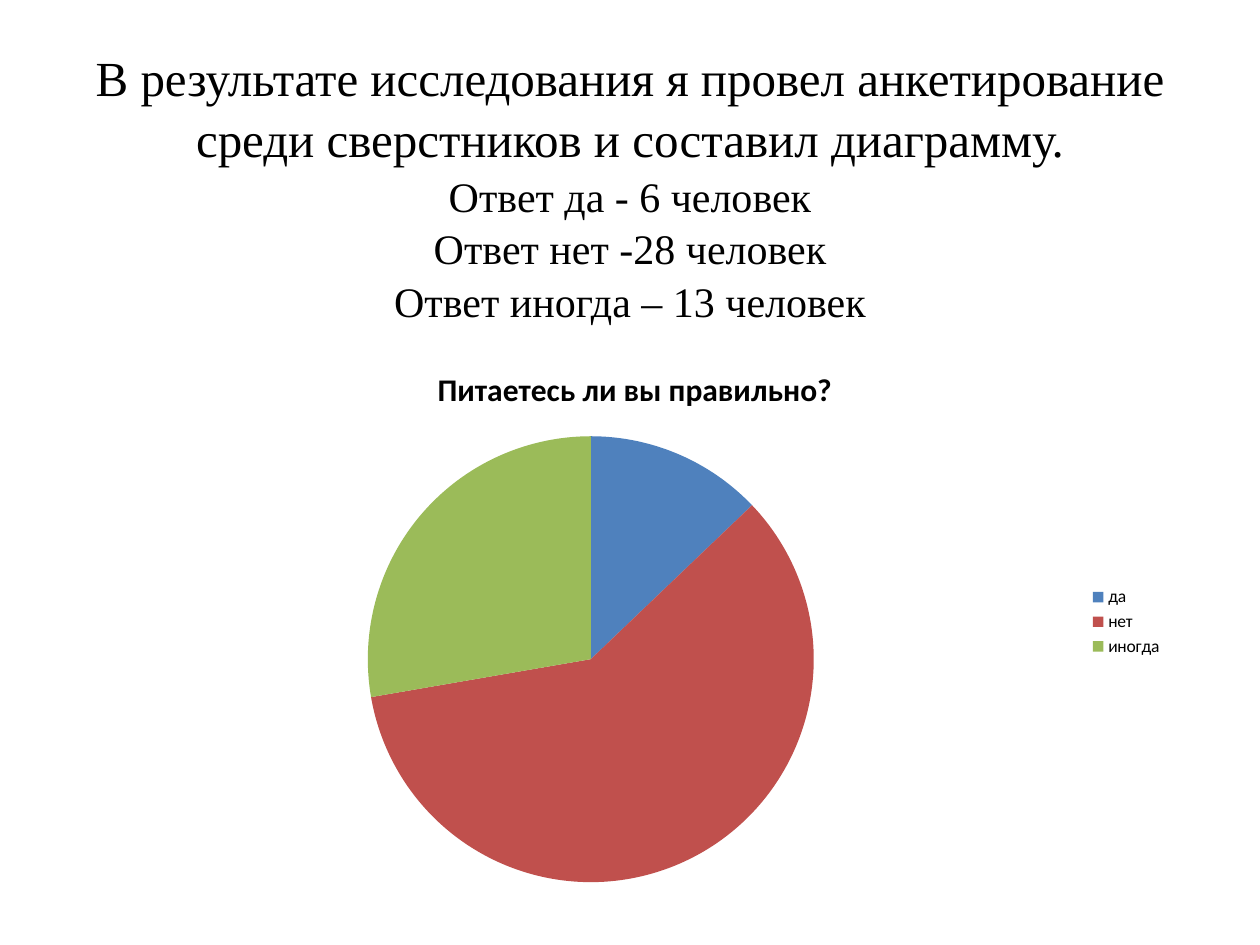
from pptx import Presentation
from pptx.chart.data import CategoryChartData
from pptx.dml.color import RGBColor
from pptx.enum.chart import XL_CHART_TYPE as ChartType, XL_LEGEND_POSITION as LegendPosition
from pptx.enum.text import MSO_ANCHOR as Anchor, PP_ALIGN as Align
from pptx.util import Inches, Pt
from lxml import etree

BLACK = RGBColor(0x00, 0x00, 0x00)
BLUE = RGBColor(0x4F, 0x81, 0xBD)
RED = RGBColor(0xC0, 0x50, 0x4D)
GREEN = RGBColor(0x9B, 0xBB, 0x59)

HEADING = "В результате исследования я провел анкетирование среди сверстников и составил диаграмму."
RESULTS = ["Ответ да - 6 человек", "Ответ нет -28 человек", "Ответ иногда – 13 человек"]
QUESTION = "Питаетесь ли вы правильно?"
ANSWERS = [("да", 13, BLUE), ("нет", 60, RED), ("иногда", 28, GREEN)]


def style_font(font, size, name="Calibri", bold=False):
    font.name, font.size, font.bold = name, Pt(size), bold
    font.color.rgb = BLACK


def add_text(para, text, size, name, break_before=False):
    """Add a formatted span, on a new line if asked."""
    if break_before:
        para.add_line_break()
        line_break = para._p[-1]
    span = para.add_run()
    span.text = text
    style_font(span.font, size, name)
    if break_before:
        # The break takes the text size, so that lines keep an even height
        props = etree.SubElement(line_break, span.font._element.tag)
        props.set("sz", str(size * 100))


def place_title(page, left, top, width, height):
    box = page.shapes.title
    box.left, box.top, box.width, box.height = left, top, width, height
    frame = box.text_frame
    frame.word_wrap = True
    frame.vertical_anchor = Anchor.TOP
    para = frame.paragraphs[0]
    para.alignment = Align.CENTER
    para.line_spacing = 1.05
    add_text(para, HEADING, 28, "Times New Roman")
    for result in RESULTS:
        add_text(para, result, 24, "Times New Roman", break_before=True)


def place_pie(page, left, top, width, height):
    names, values, colors = zip(*ANSWERS)
    data = CategoryChartData()
    data.categories = names
    data.add_series(QUESTION, values)
    chart = page.shapes.add_chart(ChartType.PIE, left, top, width, height, data).chart
    style_font(chart.font, 10)

    # Chart title
    chart.has_title = True
    title = chart.chart_title
    title.include_in_layout = False
    para = title.text_frame.paragraphs[0]
    span = para.add_run()
    span.text = QUESTION
    style_font(span.font, 18, bold=True)

    # Legend
    chart.has_legend = True
    chart.legend.position = LegendPosition.RIGHT
    chart.legend.include_in_layout = False

    # Slices
    plot = chart.plots[0]
    plot.vary_by_categories = True
    for index, color in enumerate(colors):
        fill = plot.series[0].points[index].format.fill
        fill.solid()
        fill.fore_color.rgb = color


def main():
    deck = Presentation()
    deck.slide_width, deck.slide_height = Inches(10), Inches(7.5)
    page = deck.slides.add_slide(deck.slide_layouts[5])
    place_title(page, Inches(0.5), Inches(0.3), Inches(9), Inches(6.6))
    place_pie(page, Inches(0.75), Inches(2.73), Inches(8.58), Inches(4.41))
    deck.save("out.pptx")


if __name__ == "__main__":
    main()
